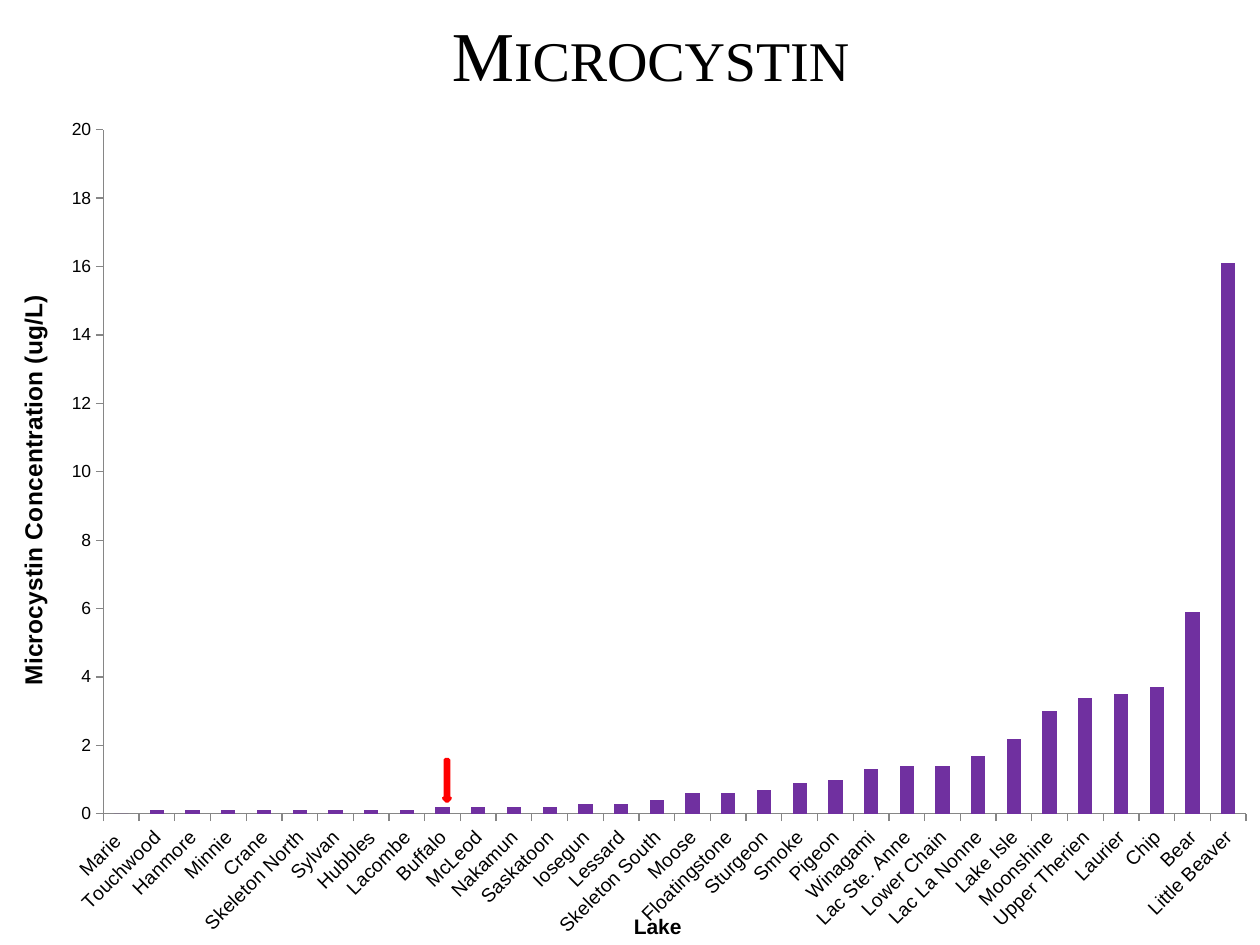
from lxml import etree
from pptx import Presentation
from pptx.chart.data import CategoryChartData
from pptx.dml.color import RGBColor
from pptx.enum.chart import XL_CHART_TYPE, XL_TICK_MARK
from pptx.enum.shapes import MSO_SHAPE
from pptx.enum.text import MSO_ANCHOR, PP_ALIGN
from pptx.oxml.ns import qn
from pptx.util import Cm, Pt

COLUMN = XL_CHART_TYPE.COLUMN_CLUSTERED
TICK_OUT, TICK_NONE = XL_TICK_MARK.OUTSIDE, XL_TICK_MARK.NONE
LEFT_ARROW = MSO_SHAPE.LEFT_ARROW
CENTER, MIDDLE = PP_ALIGN.CENTER, MSO_ANCHOR.MIDDLE

BLACK, GRAY, PURPLE, RED = "000000", "868686", "7030A0", "FF0000"
DEGREE = 60000

LAKES = [
    ("Marie ", 0), ("Touchwood", 0.1), ("Hanmore", 0.1), ("Minnie", 0.1),
    ("Crane", 0.1), ("Skeleton North", 0.1), ("Sylvan", 0.1),
    ("Hubbles", 0.1), ("Lacombe", 0.1), ("Buffalo", 0.2), ("McLeod", 0.2),
    ("Nakamun", 0.2), ("Saskatoon", 0.2), ("Iosegun", 0.3),
    ("Lessard", 0.3), ("Skeleton South", 0.4), ("Moose", 0.6),
    ("Floatingstone", 0.6), ("Sturgeon", 0.7), ("Smoke", 0.9),
    ("Pigeon", 1), ("Winagami", 1.3), ("Lac Ste. Anne", 1.4),
    ("Lower Chain", 1.4), ("Lac La Nonne", 1.7), ("Lake Isle", 2.2),
    ("Moonshine", 3), ("Upper Therien", 3.4), ("Laurier", 3.5),
    ("Chip", 3.7), ("Bear", 5.9), ("Little Beaver", 16.1),
]


def rgb(color):
    return RGBColor.from_string(color)


def set_font(font, size, name="Arial", bold=False):
    font.name = name
    font.size = Pt(size)
    font.bold = bold
    font.color.rgb = rgb(BLACK)


def set_layout(element, **settings):
    """Give a chart part a manual layout, in fractions of the chart."""
    old = element.find(qn("c:layout"))
    if old is not None:
        element.remove(old)
    layout = etree.Element(qn("c:layout"))
    manual = etree.SubElement(layout, qn("c:manualLayout"))
    for tag, value in settings.items():
        etree.SubElement(manual, qn(f"c:{tag}")).set("val", str(value))
    title_text = element.find(qn("c:tx"))
    if title_text is None:
        element.insert(0, layout)
    else:
        title_text.addnext(layout)


def style_axis(axis, title, title_size, label_size, x, y, title_angle=0):
    axis.has_major_gridlines = False
    axis.major_tick_mark = TICK_OUT
    axis.minor_tick_mark = TICK_NONE
    axis.format.line.color.rgb = rgb(GRAY)
    axis.format.line.width = Pt(0.75)
    set_font(axis.tick_labels.font, label_size)
    frame = axis.axis_title.text_frame
    frame.text = title
    set_font(frame.paragraphs[0].runs[0].font, title_size, bold=True)
    body = frame._txBody.find(qn("a:bodyPr"))
    body.set("rot", str(title_angle * DEGREE))
    body.set("vert", "horz")
    set_layout(axis.axis_title._element, xMode="edge", yMode="edge", x=x, y=y)


def add_lake_chart(slide):
    data = CategoryChartData()
    data.categories = [lake for lake, _ in LAKES]
    data.add_series("Series 1", [level for _, level in LAKES])
    chart = slide.shapes.add_chart(
        COLUMN, Cm(0), Cm(2.16), Cm(25.4), Cm(16.89), data).chart
    chart.has_legend = False
    chart.has_title = False
    set_font(chart.font, 10)

    plot = chart.plots[0]
    plot.gap_width = 150
    plot.vary_by_categories = False
    fill = plot.series[0].format.fill
    fill.solid()
    fill.fore_color.rgb = rgb(PURPLE)

    lakes, levels = chart.category_axis, chart.value_axis
    style_axis(lakes, "Lake", 12, 11, x=0.5, y=0.96)
    label_body = lakes._element.find(qn("c:txPr")).find(qn("a:bodyPr"))
    label_body.set("rot", str(-45 * DEGREE))
    label_body.set("vert", "horz")
    style_axis(levels, "Microcystin Concentration (ug/L)", 14, 10,
               x=0.01, y=0.22, title_angle=-90)
    levels.minimum_scale, levels.maximum_scale = 0, 20
    levels.major_unit = 2
    set_layout(chart._chartSpace.chart.plotArea, layoutTarget="inner",
               xMode="edge", yMode="edge", x=0.082, y=0.027, w=0.907, h=0.818)


def add_marker_arrow(slide):
    arrow = slide.shapes.add_shape(
        LEFT_ARROW, Cm(8.59), Cm(15.67), Cm(0.84), Cm(0.13))
    arrow.rotation = 270
    arrow.shadow.inherit = False
    arrow.fill.solid()
    arrow.fill.fore_color.rgb = rgb(RED)
    arrow.line.color.rgb = rgb(RED)
    arrow.line.width = Pt(2)


def add_heading(slide, text):
    frame = slide.shapes.add_textbox(
        Cm(6.55), Cm(0.1), Cm(13.13), Cm(1.96)).text_frame
    frame.word_wrap = True
    frame.vertical_anchor = MIDDLE
    frame.text = text
    paragraph = frame.paragraphs[0]
    paragraph.alignment = CENTER
    run = paragraph.runs[0]
    set_font(run.font, 40, "Times New Roman")
    run._r.get_or_add_rPr().set("cap", "small")


def main():
    deck = Presentation()
    deck.slide_width, deck.slide_height = Cm(25.4), Cm(19.05)
    slide = deck.slides.add_slide(deck.slide_layouts[6])
    add_lake_chart(slide)
    add_marker_arrow(slide)
    add_heading(slide, "Microcystin")
    deck.save("out.pptx")


if __name__ == "__main__":
    main()
